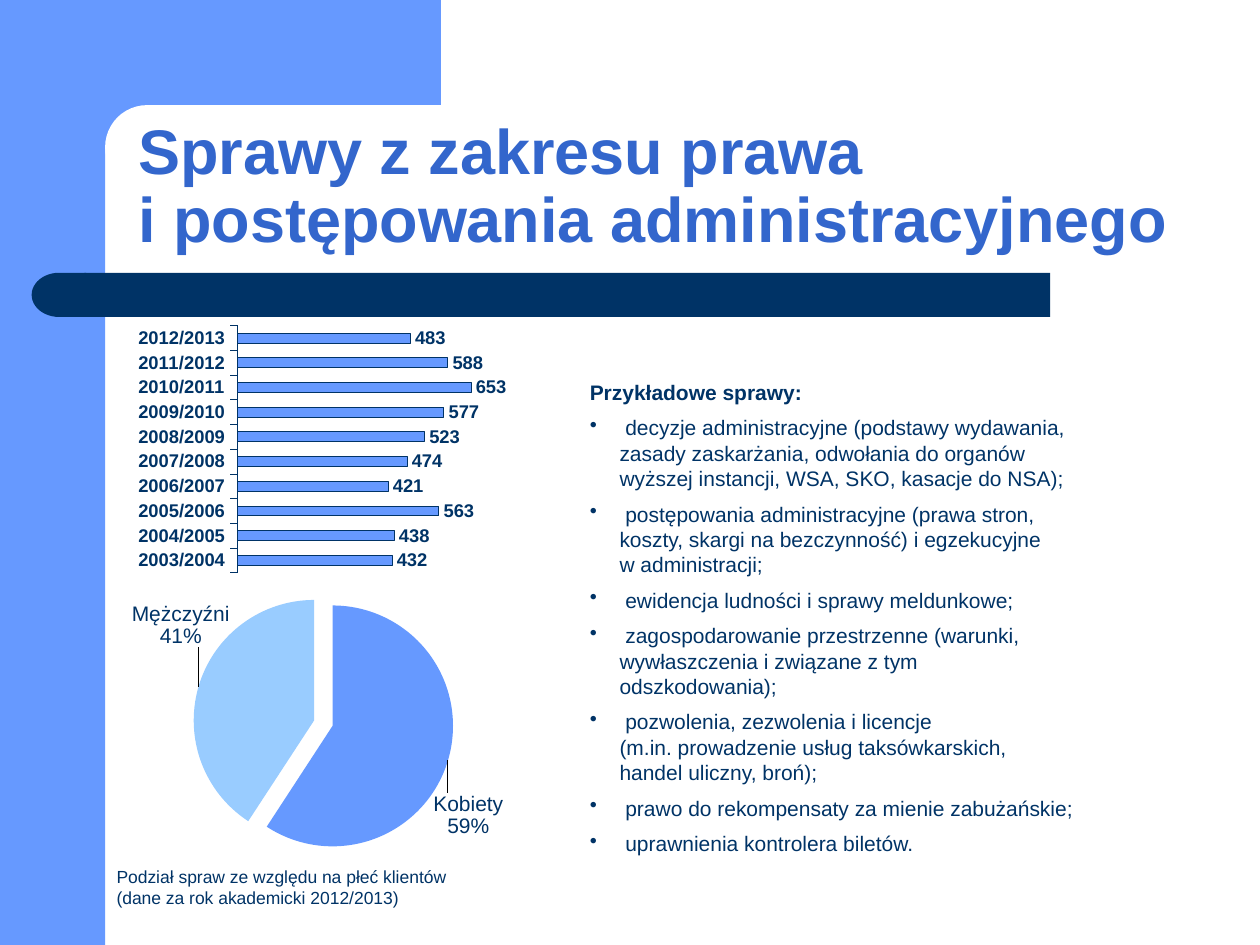
from lxml.etree import SubElement
from pptx import Presentation
from pptx.chart.data import CategoryChartData as Data
from pptx.dml.color import RGBColor
from pptx.enum.chart import XL_CHART_TYPE as Kind, XL_LABEL_POSITION as Pos
from pptx.enum.chart import XL_TICK_LABEL_POSITION as Tick, XL_TICK_MARK as Mark
from pptx.enum.shapes import MSO_SHAPE as Shape
from pptx.enum.text import MSO_ANCHOR as Anchor
from pptx.oxml import parse_xml
from pptx.oxml.ns import nsdecls, qn
from pptx.util import Cm, Pt

NAVY, BLUE, SKY, WHITE = "003366", "6699FF", "99CCFF", "FFFFFF"
TITLE = ["Sprawy z zakresu prawa \vi postępowania administracyjnego"]
HEAD = ["Przykładowe sprawy:"]
CASES = [
    " decyzje administracyjne (podstawy wydawania, zasady zaskarżania, "
    "odwołania do organów wyższej instancji, WSA, SKO, kasacje do NSA);",
    " postępowania administracyjne (prawa stron, koszty, skargi na "
    "bezczynność) i egzekucyjne \vw administracji;",
    " ewidencja ludności i sprawy meldunkowe;",
    " zagospodarowanie przestrzenne (warunki, wywłaszczenia i związane "
    "z tym odszkodowania);",
    " pozwolenia, zezwolenia i licencje \v(m.in. prowadzenie usług "
    "taksówkarskich, \vhandel uliczny, broń);",
    " prawo do rekompensaty za mienie zabużańskie;",
    " uprawnienia kontrolera biletów.",
]
NOTE = ["Podział spraw ze względu na płeć klientów (dane za rok akademicki 2012/2013)"]
START = 2003
COUNTS = [432, 438, 563, 421, 474, 523, 577, 653, 588, 483]
SEXES = {"Kobiety": 286, "Mężczyźni": 197}
SLICES = [(BLUE, -0.04, 0.1), (SKY, 0.07, -0.12)]
PANELS = [
    (Shape.RECTANGLE, (0, 0, 2.12, 19.05), BLUE, None),
    (Shape.RECTANGLE, (1.9, 0, 6.99, 2.96), BLUE, None),
    (Shape.ROUNDED_RECTANGLE, (2.12, 2.12, 14.18, 1.69), WHITE, 0.5),
    (Shape.ROUNDED_RECTANGLE, (1.7, 5.5, 19.47, 0.89), NAVY, 0),
    (Shape.FLOWCHART_DELAY, (0.64, 5.5, 1.1, 0.89), NAVY, None),
]

deck = Presentation()
deck.slide_width, deck.slide_height = Cm(25.4), Cm(19.05)
slide = deck.slides.add_slide(deck.slide_layouts[6])


def rgb(code):
    return RGBColor.from_string(code)


def paint(part, code):
    part.fill.solid()
    part.fill.fore_color.rgb = rgb(code)


def style(font, size, color=NAVY, bold=False):
    font.name, font.size, font.bold = "Arial", Pt(size), bold
    font.color.rgb = rgb(color)


def write(frame, lines, size, color=NAVY, bold=False, gap=0, bullet=False, lead=1):
    for line in lines:
        para = frame.paragraphs[0]
        if para.runs:
            para = frame.add_paragraph()
        para.text = line
        para.space_before, para.line_spacing = Pt(gap), lead
        for run in para.runs:
            style(run.font, size, color, bold)
        if bullet:
            props = para._p.get_or_add_pPr()
            props.set("marL", str(Cm(0.6)))
            props.set("indent", str(-Cm(0.6)))
            SubElement(props, qn("a:buChar")).set("char", "•")


def box(place, anchor=Anchor.TOP):
    frame = slide.shapes.add_textbox(*map(Cm, place)).text_frame
    frame.word_wrap, frame.vertical_anchor = True, anchor
    return frame


def plot(kind, place, cats, vals):
    data = Data()
    data.categories = cats
    data.add_series("Series 1", vals)
    chart = slide.shapes.add_chart(kind, *map(Cm, place), data).chart
    chart.has_legend = chart.has_title = False
    style(chart.font, 12)
    return chart, chart.plots[0], chart.plots[0].series[0]


def layout(**parts):
    body = "".join(f'<c:{key} val="{val}"/>' for key, val in parts.items())
    return parse_xml(f'<c:layout {nsdecls("c")}><c:manualLayout>{body}'
                     '</c:manualLayout></c:layout>')


def frame_plot(chart, **sides):
    area = chart._chartSpace.chart.plotArea
    for old in area.findall(qn("c:layout")):
        area.remove(old)
    area.insert(0, layout(layoutTarget="inner", xMode="edge", yMode="edge", **sides))


def add_bars():
    years = [f"{START + i}/{START + i + 1}" for i in range(len(COUNTS))]
    chart, bars, row = plot(Kind.BAR_CLUSTERED, (2.31, 6.1, 8.85, 5.79), years, COUNTS)
    frame_plot(chart, x=0.28, y=0.08, w=0.57, h=0.86)
    bars.gap_width, bars.vary_by_categories = 150, False
    paint(row.format, BLUE)
    row.format.line.color.rgb = rgb(NAVY)
    row.format.line.width = Pt(0.25)
    tags = row.data_labels
    tags.show_value, tags.position = True, Pos.OUTSIDE_END
    style(tags.font, 10.5, bold=True)
    axis = chart.category_axis
    axis.major_tick_mark, axis.tick_label_position = Mark.OUTSIDE, Tick.LOW
    axis.has_major_gridlines = False
    axis.format.line.color.rgb = rgb(NAVY)
    axis.format.line.width = Pt(0.15)
    style(axis.tick_labels.font, 10.5, bold=True)
    scale = chart.value_axis
    scale.minimum_scale, scale.maximum_scale = 0, 700
    scale.has_major_gridlines = scale.visible = False


def add_pie():
    chart, pie, row = plot(Kind.PIE, (0.69, 11.53, 11, 6.1), list(SEXES), list(SEXES.values()))
    frame_plot(chart, x=0.29, y=0.07, w=0.48, h=0.86)
    pie.vary_by_categories = True
    for i, (color, *_) in enumerate(SLICES):
        paint(row.points[i].format, color)
    row._element.insert_element_before(
        parse_xml(f'<c:explosion {nsdecls("c")} val="8"/>'),
        "c:dPt", "c:dLbls", "c:cat", "c:val")
    tags = row.data_labels
    tags.show_value = tags.show_category_name = True
    style(tags.font, 12)
    root = tags._element
    for old in root.findall(qn("c:showLeaderLines")):
        root.remove(old)
    SubElement(root, qn("c:showLeaderLines")).set("val", "1")
    flags = dict(showLegendKey=0, showVal=0, showCatName=1,
                 showSerName=0, showPercent=1, showBubbleSize=0)
    shows = "".join(f'<c:{key} val="{val}"/>' for key, val in flags.items())
    for i, (_, right, down) in enumerate(SLICES):
        tag = parse_xml(
            f'<c:dLbl {nsdecls("c")}><c:idx val="{i}"/>'
            '<c:numFmt formatCode="0%" sourceLinked="0"/><c:dLblPos val="outEnd"/>'
            f'{shows}<c:separator>\n</c:separator></c:dLbl>')
        tag.insert(1, layout(x=right, y=down))
        root.insert(i, tag)
        style(row.points[i].data_label.font, 12)


for kind, place, color, bend in PANELS:
    panel = slide.shapes.add_shape(kind, *map(Cm, place))
    panel.shadow.inherit = False
    paint(panel, color)
    panel.line.fill.background()
    if bend is not None:
        panel.adjustments[0] = bend
    if kind == Shape.FLOWCHART_DELAY:
        panel._element.spPr.xfrm.set("flipH", "1")

write(box((2.54, 2.11, 22.23, 3.18), Anchor.BOTTOM), TITLE, 36, "3366CC", True, lead=0.9)
body = box((11.64, 7.52, 10.26, 9.65))
write(body, HEAD, 12, bold=True, gap=6)
write(body, CASES, 12, gap=6, bullet=True)
add_bars()
write(box((2.1, 17.33, 7.7, 1.09)), NOTE, 10, gap=5)
add_pie()
deck.save("out.pptx")
